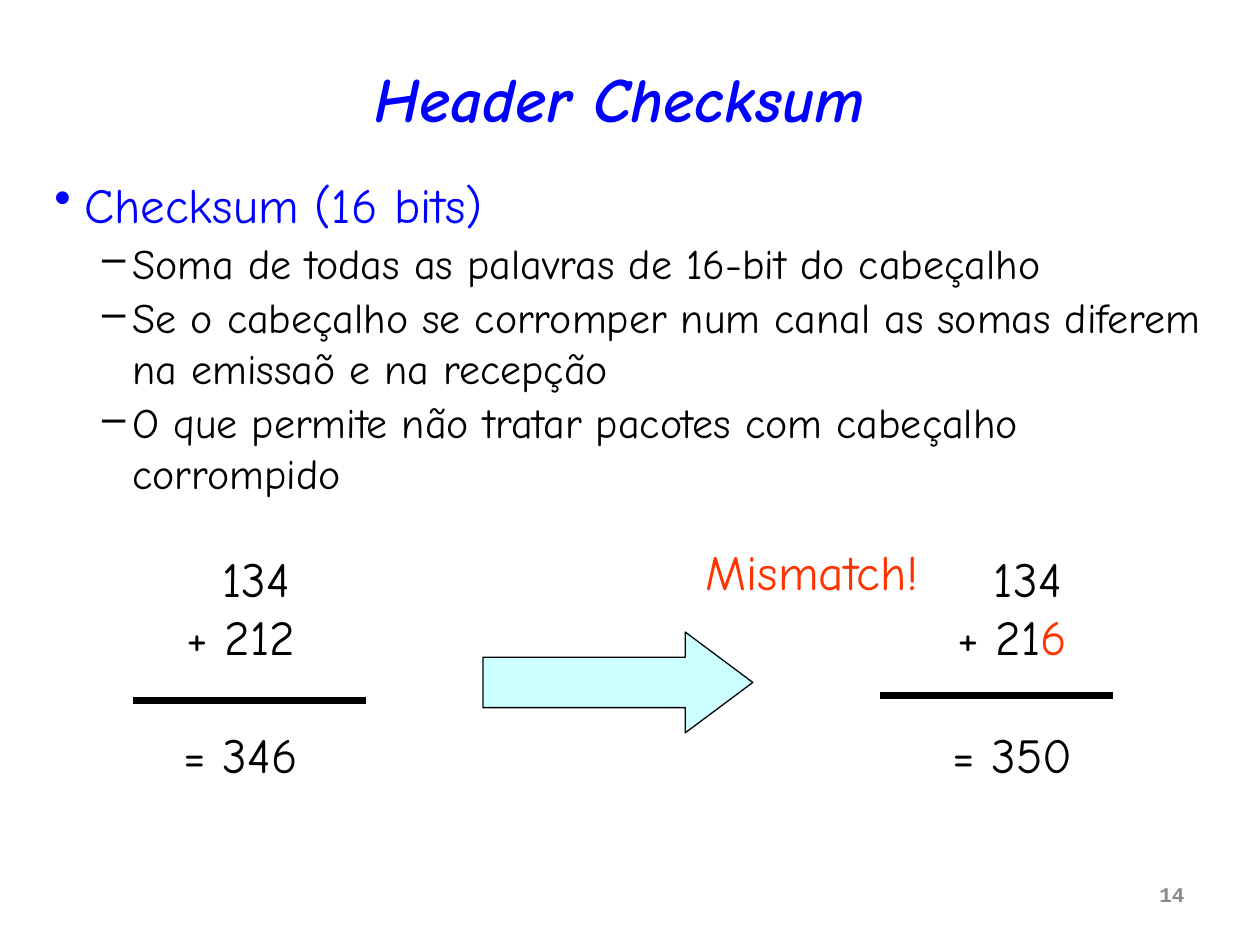
from lxml import etree
from pptx import Presentation
from pptx import util as u
from pptx.dml.color import RGBColor
from pptx.enum import shapes, text
from pptx.oxml.ns import qn

COLORS = {"blue": "0000FF", "black": "000000", "red": "FF3300",
          "gray": "898989", "aqua": "CCFFFF"}
CELL = u.Inches(1 / 12)  # the slide is a grid of 120 columns by 90 rows
CENTER = text.PP_ALIGN.CENTER


def grid(*cells):
    return [round(n * CELL) for n in cells]


def rgb(name):
    return RGBColor.from_string(COLORS[name])


def add_box(slide, area, wrap=True, anchor=text.MSO_ANCHOR.TOP):
    frame = slide.shapes.add_textbox(*grid(*area)).text_frame
    frame.word_wrap = wrap
    frame.vertical_anchor = anchor
    frame.auto_size = (text.MSO_AUTO_SIZE.NONE if wrap
                       else text.MSO_AUTO_SIZE.SHAPE_TO_FIT_TEXT)
    return frame


def write(frame, *parts, size=28, color="black", font="Comic Neue", bold=False,
          italic=False, align=None, before=0, margin=0, bullet=None, level=0):
    """Add a paragraph; a part is a string or a (string, color) pair."""
    first = frame.paragraphs[0]
    line = first if not first.runs else frame.add_paragraph()
    line.level = level
    line.alignment = align
    line.space_before = u.Pt(before)
    props = line._p.get_or_add_pPr()
    props.set("marL", str(u.Inches(margin)))
    if bullet:
        props.set("indent", str(u.Inches(-0.24)))
        etree.SubElement(props, qn("a:buChar")).set("char", bullet)
    for part in parts:
        words, tint = part if isinstance(part, tuple) else (part, color)
        run = line.add_run()
        run.text = words
        run.font.name, run.font.size = font, u.Pt(size)
        run.font.bold, run.font.italic = bold, italic
        run.font.color.rgb = rgb(tint)


def add_sum(slide, left, addend, total):
    frame = add_box(slide, (left, 51.6, 14.9, 23.9), wrap=False)
    write(frame, "134", align=CENTER, margin=0.24)
    write(frame, *addend, align=CENTER)
    write(frame, total, align=CENTER, before=33.5)


def add_rule(slide, left, row, length=22.2):
    rule = slide.shapes.add_connector(
        shapes.MSO_CONNECTOR.STRAIGHT, *grid(left, row, left + length, row))
    rule.line.color.rgb = rgb("black")
    rule.line.width = u.Pt(4)
    etree.SubElement(rule._element.spPr, qn("a:effectLst"))


def add_channel_arrow(slide):
    arrow = slide.shapes.add_shape(
        shapes.MSO_SHAPE.RIGHT_ARROW, *grid(46, 60.2, 25.7, 9.6))
    arrow.adjustments[1] = 0.67
    arrow.shadow.inherit = False
    arrow.fill.solid()
    arrow.fill.fore_color.rgb = rgb("aqua")
    arrow.line.color.rgb = rgb("black")
    arrow.line.width = u.Pt(0.75)


def main():
    deck = Presentation()
    deck.slide_width, deck.slide_height = grid(120, 90)
    slide = deck.slides.add_slide(deck.slide_layouts[6])

    title = add_box(slide, (4, 5, 110, 8.6), anchor=text.MSO_ANCHOR.MIDDLE)
    write(title, "Header Checksum", size=36, color="blue", bold=True,
          italic=True, align=CENTER)

    body = add_box(slide, (4, 16, 113, 68.6))
    write(body, "Checksum (16 bits)", color="blue", bullet="•", margin=0.24)
    for point in (
        "Soma de todas as palavras de 16-bit do cabeçalho",
        "Se o cabeçalho se corromper num canal as somas diferem "
        "na emissaõ e na recepção",
        "O que permite não tratar pacotes com cabeçalho corrompido",
    ):
        write(body, point, size=24, bullet="–", level=1, margin=0.62, before=2.4)

    number = add_box(slide, (86, 83.4, 28, 4.8))
    write(number, "14", size=12, color="gray", font="Courier New", bold=True,
          align=text.PP_ALIGN.RIGHT)

    add_sum(slide, 15.5, ["+ 212"], "= 346")
    add_sum(slide, 89, ["+ 21", ("6", "red")], "= 350")
    add_rule(slide, 12.7, 66.7)
    add_rule(slide, 83.8, 66.2)
    add_channel_arrow(slide)
    mismatch = add_box(slide, (65, 51, 24.7, 6.8), wrap=False)
    write(mismatch, "Mismatch!", color="red", align=CENTER)

    deck.save("out.pptx")


if __name__ == "__main__":
    main()
